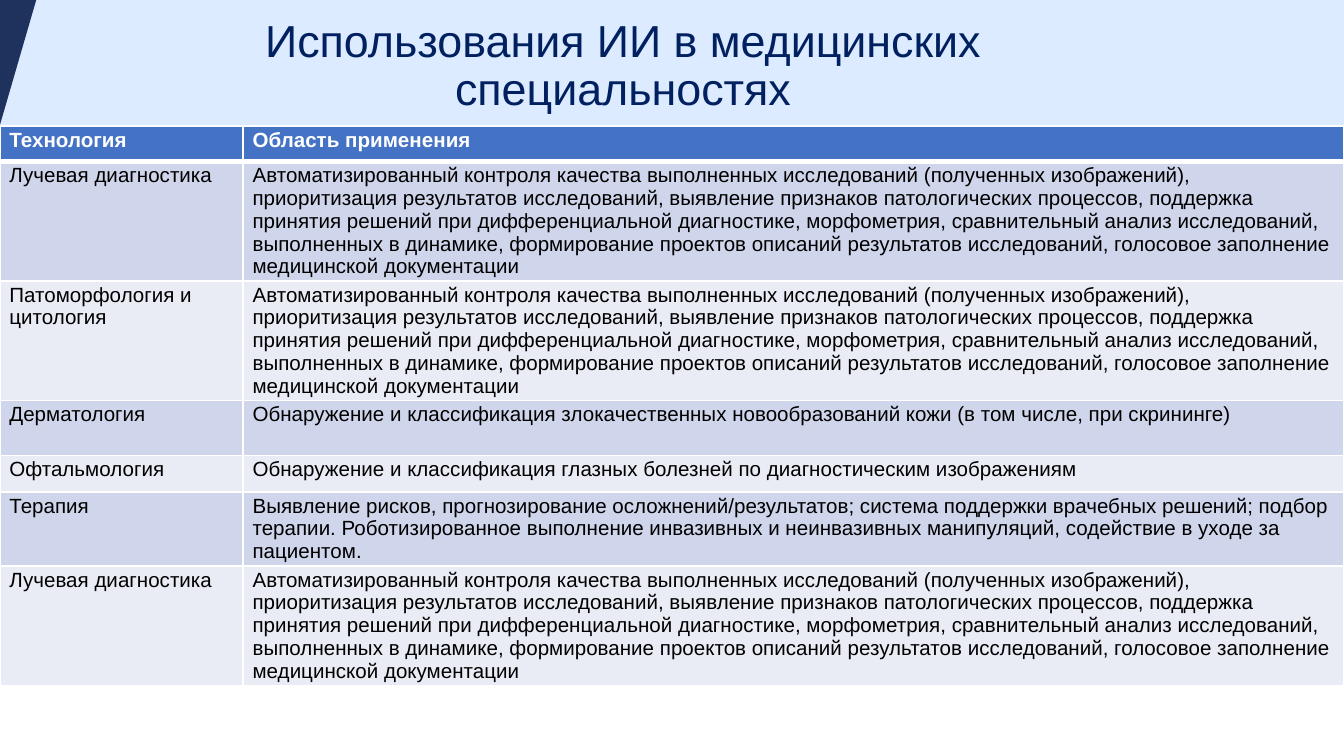
import pptx
import pptx.util
import pptx.dml.color
import pptx.enum.shapes
import pptx.enum.text
import pptx.oxml
import pptx.oxml.ns

COLORS = {
    "band": "DCEBFF",
    "wedge": "1F325E",
    "title": "002060",
    "header": "4472C4",
    "odd": "CFD5EA",
    "even": "E9EBF5",
    "white": "FFFFFF",
    "black": "000000",
}
IMAGING = (
    "Автоматизированный контроля качества выполненных исследований (полученных изображений), "
    "приоритизация результатов исследований, выявление признаков патологических процессов, "
    "поддержка принятия решений при дифференциальной диагностике, морфометрия, сравнительный "
    "анализ исследований, выполненных в динамике, формирование проектов описаний результатов "
    "исследований, голосовое заполнение медицинской документации"
)
ROWS = [
    (0.26, "Технология", "Область применения"),
    (0.41, "Лучевая диагностика", IMAGING),
    (0.41, "Патоморфология и цитология", IMAGING),
    (0.41, "Дерматология", "Обнаружение и классификация злокачественных новообразований кожи "
     "(в том числе, при скрининге)"),
    (0.27, "Офтальмология", "Обнаружение и классификация глазных болезней по диагностическим "
     "изображениям"),
    (0.41, "Терапия", "Выявление рисков, прогнозирование осложнений/результатов; система поддержки "
     "врачебных решений; подбор терапии. Роботизированное выполнение инвазивных и неинвазивных "
     "манипуляций, содействие в уходе за пациентом."),
    (0.41, "Лучевая диагностика", IMAGING),
]
COLUMNS = [1.81, 8.19]
inch = pptx.util.Inches
BAND_HEIGHT = inch(0.93)


def color(name):
    return pptx.dml.color.RGBColor.from_string(COLORS[name])


def add_border(cell, side, points):
    cell._tc.get_or_add_tcPr().append(pptx.oxml.parse_xml(
        f'<a:ln{side} {pptx.oxml.ns.nsdecls("a")} w="{pptx.util.Pt(points)}">'
        f'<a:solidFill><a:srgbClr val="{COLORS["white"]}"/></a:solidFill></a:ln{side}>'
    ))


deck = pptx.Presentation()
deck.slide_width = inch(10)
deck.slide_height = deck.slide_width * 9 // 16
slide = deck.slides.add_slide(deck.slide_layouts[6])

band = slide.shapes.add_shape(
    pptx.enum.shapes.MSO_SHAPE.RECTANGLE, 0, 0, deck.slide_width, BAND_HEIGHT)
outline = slide.shapes.build_freeform(0, 0)
outline.add_line_segments([(inch(0.27), 0), (0, BAND_HEIGHT)], close=True)
wedge = outline.convert_to_shape()
for shape, name in ((band, "band"), (wedge, "wedge")):
    shape.shadow.inherit = False
    shape.fill.solid()
    shape.fill.fore_color.rgb = color(name)
    shape.line.fill.background()

frame = slide.shapes.add_table(
    len(ROWS), len(COLUMNS), 0, inch(0.94), deck.slide_width, inch(4.4))
table = frame.table
for column, width in zip(table.columns, COLUMNS):
    column.width = inch(width)

for row_index, (height, *texts) in enumerate(ROWS):
    table.rows[row_index].height = inch(height)
    is_header = row_index == 0
    fill_name = "header" if is_header else ("odd" if row_index % 2 else "even")
    for column_index, text in enumerate(texts):
        cell = table.cell(row_index, column_index)
        cell.margin_left = cell.margin_right = inch(0.07)
        cell.margin_top = cell.margin_bottom = inch(0.02)
        add_border(cell, "L", 1)
        add_border(cell, "R", 1)
        add_border(cell, "T", 3 if row_index == 1 else 1)
        add_border(cell, "B", 3 if is_header else 1)
        cell.fill.solid()
        cell.fill.fore_color.rgb = color(fill_name)
        cell.text = text
        font = cell.text_frame.paragraphs[0].font
        font.name = "Arial"
        font.size = pptx.util.Pt(11)
        font.bold = is_header
        font.color.rgb = color("white" if is_header else "black")
frame.height = inch(4.4)

title = slide.shapes.add_textbox(inch(0.69), inch(0.09), inch(7.89), inch(0.5))
title.text_frame.word_wrap = True
title.text_frame.vertical_anchor = pptx.enum.text.MSO_ANCHOR.TOP
para = title.text_frame.paragraphs[0]
para.text = "Использования ИИ в медицинских специальностях"
para.alignment = pptx.enum.text.PP_ALIGN.CENTER
para.line_spacing = 0.9
para.font.name = "Arial"
para.font.size = pptx.util.Pt(24)
para.font.color.rgb = color("title")

deck.save("out.pptx")
